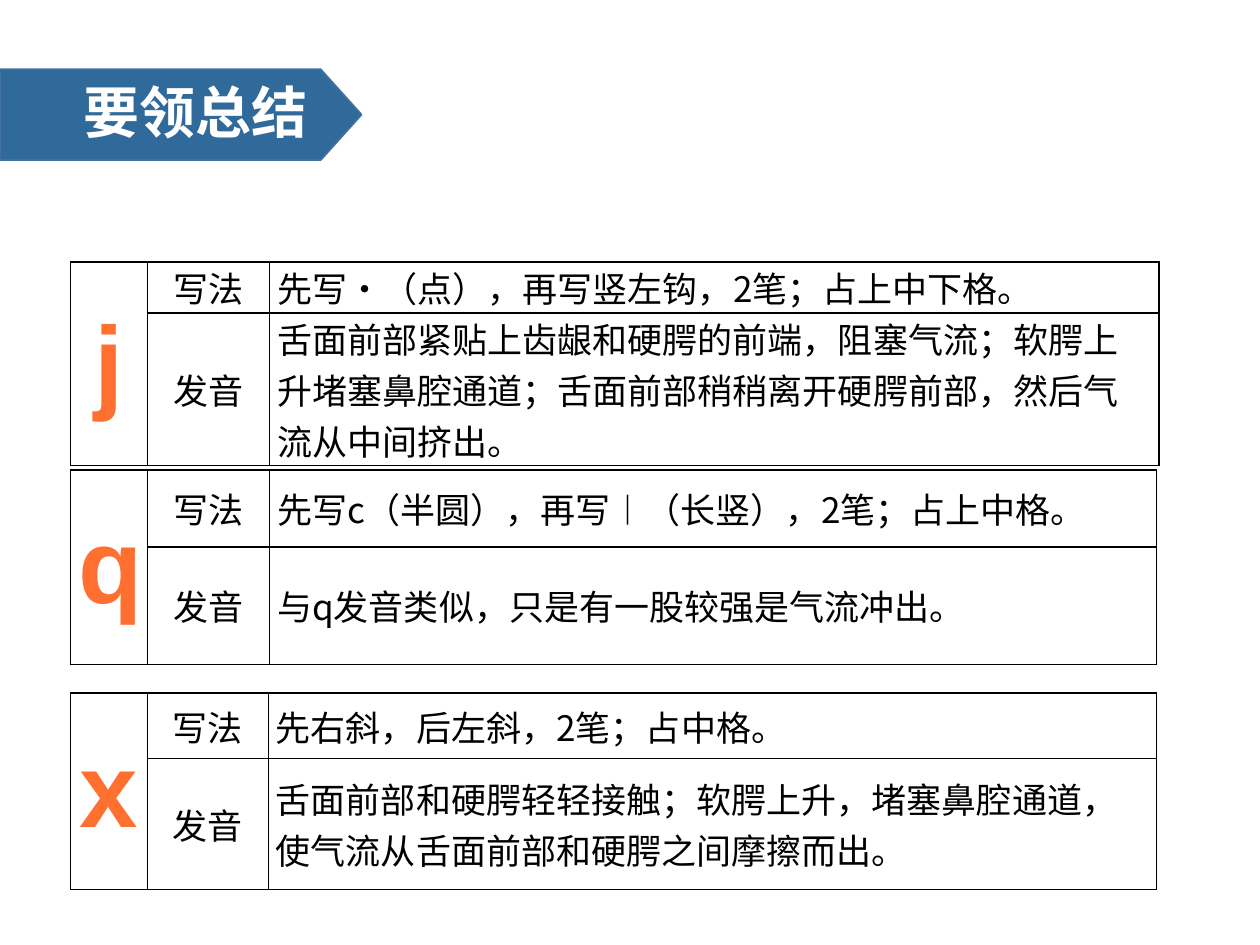
from lxml import etree
from pptx import Presentation
from pptx.dml.color import RGBColor
from pptx.enum import shapes, text
from pptx.oxml import ns
from pptx.util import Inches, Pt

BLUE = RGBColor(0x30, 0x6A, 0x9B)
EDGE = RGBColor(0x41, 0x71, 0x9C)
WHITE = RGBColor(0xFF, 0xFF, 0xFF)
BLACK = RGBColor(0, 0, 0)
ORANGE = RGBColor(0xFF, 0x70, 0x30)

HAN = "Noto Sans CJK SC"
MID = text.MSO_ANCHOR.MIDDLE
LEFT = text.PP_ALIGN.LEFT
CENTER = text.PP_ALIGN.CENTER

HEAD = dict(name=HAN, size=Pt(32), bold=True)
SIGN = dict(name="Arial", size=Pt(60), bold=True)
BODY = dict(name=HAN, size=Pt(20), bold=False)
PAD = dict(margin_left=Inches(0.06), margin_right=Inches(0.06),
           margin_top=0, margin_bottom=0, vertical_anchor=MID)

CARDS = [
    ("j", (0.56, 2.08), (0.61, 0.97, 7.06), (0.38, 0.77),
     "先写·（点），再写竖左钩，2笔；占上中下格。",
     "舌面前部紧贴上齿龈和硬腭的前端，阻塞气流；软腭上升堵塞鼻腔通道；"
     "舌面前部稍稍离开硬腭前部，然后气流从中间挤出。"),
    ("q", (0.56, 3.73), (0.61, 0.97, 7.04), (0.61, 0.61),
     "先写c（半圆），再写︱（长竖），2笔；占上中格。",
     "与q发音类似，只是有一股较强是气流冲出。"),
    ("x", (0.56, 5.5), (0.61, 0.96, 7.05), (0.52, 1.04),
     "先右斜，后左斜，2笔；占中格。",
     "舌面前部和硬腭轻轻接触；软腭上升，堵塞鼻腔通道，"
     "使气流从舌面前部和硬腭之间摩擦而出。"),
]


def apply(obj, form):
    for key, val in form.items():
        setattr(obj, key, val)


def write(para, words, form, color, align):
    para.alignment = align
    run = para.add_run()
    run.text = words
    apply(run.font, form)
    run.font.color.rgb = color
    east = etree.SubElement(run.font._element, ns.qn("a:ea"))
    east.set("typeface", form["name"])


def frame(cell):
    props = cell._tc.get_or_add_tcPr()
    for spot, side in enumerate(("lnL", "lnR", "lnT", "lnB")):
        line = etree.Element(ns.qn("a:" + side), w=str(Pt(1)))
        fill = etree.SubElement(line, ns.qn("a:solidFill"))
        etree.SubElement(fill, ns.qn("a:srgbClr"), val=str(BLACK))
        props.insert(spot, line)


def banner(slide, left, top, width, height):
    arrow = slide.shapes.add_shape(
        shapes.MSO_SHAPE.PENTAGON,
        Inches(left), Inches(top), Inches(width), Inches(height))
    arrow.adjustments[0] = 0.45
    arrow.shadow.inherit = False
    arrow.fill.solid()
    arrow.fill.fore_color.rgb = BLUE
    arrow.line.color.rgb = EDGE
    arrow.line.width = Pt(1)

    title = slide.shapes.title
    title.element.addprevious(arrow.element)
    apply(title, dict(left=Inches(left + 0.56), top=Inches(top + 0.09),
                      width=Inches(2.11), height=Inches(0.55)))
    apply(title.text_frame, dict(vertical_anchor=MID, word_wrap=True,
                                 auto_size=text.MSO_AUTO_SIZE.NONE))
    para = title.text_frame.paragraphs[0]
    para.line_spacing = 0.9
    write(para, "要领总结", HEAD, WHITE, LEFT)


def card(slide, sign, spot, cols, rows, stroke, sound):
    left, top = spot
    grid = slide.shapes.add_table(
        2, 3, Inches(left), Inches(top),
        Inches(sum(cols)), Inches(sum(rows))).table
    apply(grid, dict(first_row=False, horz_banding=False))
    for col, width in zip(grid.columns, cols):
        col.width = Inches(width)
    for row, height in zip(grid.rows, rows):
        row.height = Inches(height)
    for cell in grid.iter_cells():
        apply(cell, PAD)
        cell.fill.background()
        frame(cell)

    grid.cell(0, 0).merge(grid.cell(1, 0))
    write(grid.cell(0, 0).text_frame.paragraphs[0],
          sign, SIGN, ORANGE, CENTER)
    for idx, pair in enumerate((("写法", stroke), ("发音", sound))):
        for col, (words, align) in enumerate(zip(pair, (CENTER, LEFT)), 1):
            write(grid.cell(idx, col).text_frame.paragraphs[0],
                  words, BODY, BLACK, align)


def main():
    deck = Presentation()
    deck.slide_width, deck.slide_height = Inches(10), Inches(7.5)
    slide = deck.slides.add_slide(deck.slide_layouts[5])
    banner(slide, 0, 0.55, 2.87, 0.72)
    for item in CARDS:
        card(slide, *item)
    deck.save("out.pptx")


if __name__ == "__main__":
    main()
